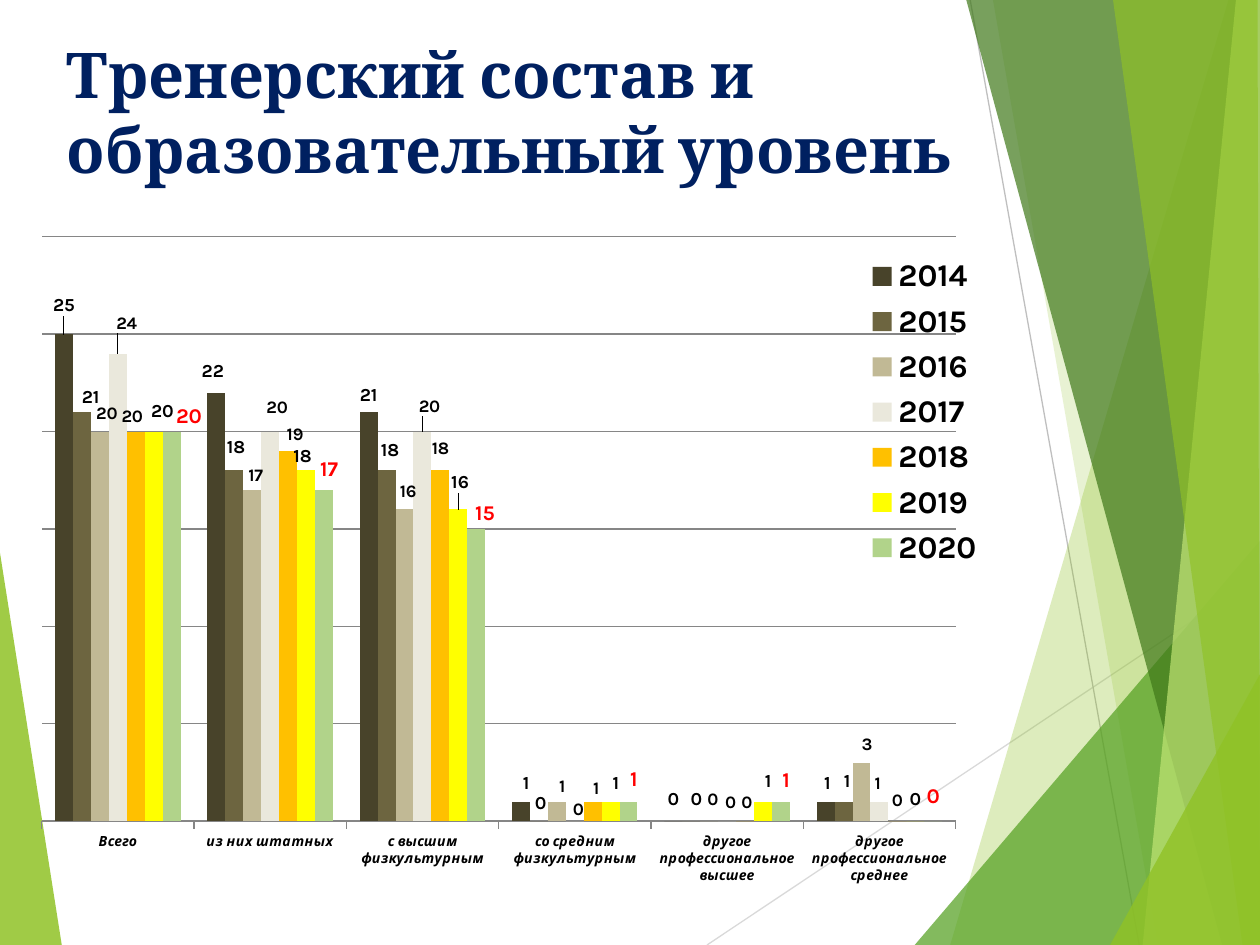
"""Builds a slide with a clustered column chart of coaching staff by education level."""
import pptx
import pptx.chart.data
import pptx.dml.color
import pptx.enum.chart
import pptx.enum.shapes
import pptx.enum.text
import pptx.oxml
import pptx.oxml.ns
import pptx.util

Pt = pptx.util.Pt
WIDTH, HEIGHT = 720, 540
TITLE = "Тренерский состав и образовательный уровень"
CATEGORIES = ["Всего", "из них штатных", "с высшим физкультурным", "со средним физкультурным",
              "другое профессиональное высшее", "другое профессиональное среднее"]
SERIES = [
    {"name": "2014", "values": [25, 22, 21, 1, 0, 1], "fill": "48432A", "size": 10.5, "color": "000000",
     "nudges": [(0, -7), (-2, -3), (0, 0), (3, -1), (0, -3), (1, -1)]},
    {"name": "2015", "values": [21, 18, 18, 0, 0, 1], "fill": "6D6540", "size": 10.5, "color": "000000",
     "nudges": [(5, 1), (1, -4), (2, -2), (1, -1), (3, -3), (2, -2)]},
    {"name": "2016", "values": [20, 17, 16, 1, 0, 3], "fill": "C1B995", "size": 10, "color": "000000",
     "nudges": [(4, -2), (2, 0), (2, -2), (3, 0), (2, -4), (3, -2)]},
    {"name": "2017", "values": [24, 20, 20, 0, 0, 1], "fill": "EAE8DC", "size": 10, "color": "000000",
     "nudges": [(5, -9), (4, -5), (4, -6), (2, 2), (2, -2), (-1, -2)]},
    {"name": "2018", "values": [20, 19, 18, 1, 0, 0], "fill": "FFC000", "size": 10, "color": "000000",
     "nudges": [(-2, 0), (4, -1), (0, -4), (2, 1), (1, -2), (0, -3)]},
    {"name": "2019", "values": [20, 18, 16, 1, 1, 0], "fill": "FFFF00", "size": 10.5, "color": "000000",
     "nudges": [(5, -2), (-2, 1), (1, -6), (3, -1), (3, -2), (0, -3)]},
    {"name": "2020", "values": [20, 17, 15, 1, 1, 0], "fill": "B1D38A", "size": 12, "color": "FF0000",
     "nudges": [(10, 1), (3, -2), (5, 1), (3, -3), (3, -2), (0, -4)]},
]
LEFT_FACET = ([(0, 316), (35.3, HEIGHT), (0, HEIGHT)], "90C226", 85)
RAYS = [((404, HEIGHT), (WIDTH, 329), "D9D9D9"), ((554.4, 0), (651, HEIGHT), "BFBFBF")]
RIGHT_FACETS = [
    ([(702, 0), (543, HEIGHT), (WIDTH, HEIGHT), (WIDTH, 0)], "90C226", 30),
    ([(567.4, 0), (661.7, HEIGHT), (WIDTH, HEIGHT), (WIDTH, 0)], "90C226", 20),
    ([(522.7, HEIGHT), (WIDTH, 309), (WIDTH, HEIGHT)], "54A021", 72),
    ([(552.2, 0), (698.4, HEIGHT), (WIDTH, HEIGHT), (WIDTH, 0)], "3F7819", 70),
    ([(706.3, 0), (653, HEIGHT), (WIDTH, HEIGHT), (WIDTH, 0)], "C0E474", 70),
    ([(636, 0), (710, HEIGHT), (WIDTH, HEIGHT), (718.6, 0)], "90C226", 65),
    ([(634.3, HEIGHT), (WIDTH, 385.2), (WIDTH, HEIGHT)], "90C226", 80),
]
CHART_BOX = (-8.6, 111.6, 689, 401)
PLOT_BOX = (32.4, 23.7, 522.3, 334)
LEGEND_BOX = (500, 31, 74, 186)


def rgb(value):
    return pptx.dml.color.RGBColor.from_string(value)


def set_font(font, size, color="000000", name="Karla", italic=False):
    font.size, font.name, font.bold, font.italic = Pt(size), name, True, italic
    font.color.rgb = rgb(color)


def write(frame, text, **style):
    frame.word_wrap = True
    frame.auto_size = pptx.enum.text.MSO_AUTO_SIZE.NONE
    frame.vertical_anchor = pptx.enum.text.MSO_ANCHOR.TOP
    paragraph = frame.paragraphs[0]
    paragraph.alignment = pptx.enum.text.PP_ALIGN.LEFT
    run = paragraph.add_run()
    run.text = text
    set_font(run.font, **style)


def add_facet(slide, corners, color, opacity):
    points = [(Pt(x), Pt(y)) for x, y in corners]
    builder = slide.shapes.build_freeform(*points[0])
    builder.add_line_segments(points[1:], close=True)
    facet = builder.convert_to_shape()
    facet.shadow.inherit = False
    facet.line.fill.background()
    facet.fill.solid()
    facet.fill.fore_color.rgb = rgb(color)
    tone = facet._element.spPr.find(".//" + pptx.oxml.ns.qn("a:srgbClr"))
    tone.append(pptx.oxml.parse_xml(
        f'<a:alpha {pptx.oxml.ns.nsdecls("a")} val="{opacity * 1000}"/>'))


def add_ray(slide, start, end, color):
    ray = slide.shapes.add_connector(pptx.enum.shapes.MSO_CONNECTOR.STRAIGHT,
                                     *(Pt(v) for v in start + end))
    ray.line.color.rgb = rgb(color)
    ray.line.width = Pt(0.75)
    ray._element.spPr.append(pptx.oxml.parse_xml(
        f'<a:effectLst {pptx.oxml.ns.nsdecls("a")}/>'))


def layout(box, modes=""):
    """Return a manual chart layout for a box, or for an offset, in points."""
    sizes = CHART_BOX[2:] * 2
    parts = "".join(f'<c:{tag} val="{value / size:.4f}"/>'
                    for tag, value, size in zip("xywh", box, sizes))
    return pptx.oxml.parse_xml(f'<c:layout {pptx.oxml.ns.nsdecls("c")}><c:manualLayout>'
                               f'{modes}{parts}</c:manualLayout></c:layout>')


def place(element, box, target=""):
    """Give a chart part a fixed box inside the chart."""
    for old in element.findall(pptx.oxml.ns.qn("c:layout")):
        element.remove(old)
    modes = target + '<c:xMode val="edge"/><c:yMode val="edge"/>'
    position = element.find(pptx.oxml.ns.qn("c:legendPos"))
    element.insert(0 if position is None else 1, layout(box, modes))


def format_series(series, content):
    series.format.fill.solid()
    series.format.fill.fore_color.rgb = rgb(content["fill"])
    series.invert_if_negative = False
    labels = series.data_labels
    labels.show_value = True
    set_font(labels.font, content["size"], content["color"])
    for index, nudge in enumerate(content["nudges"]):
        label = series.points[index].data_label
        set_font(label.font, content["size"], content["color"])
        label.position = pptx.enum.chart.XL_LABEL_POSITION.OUTSIDE_END
        labels._element.findall(pptx.oxml.ns.qn("c:dLbl"))[index].insert(1, layout(nudge))


def add_staff_chart(slide):
    data = pptx.chart.data.CategoryChartData()
    data.categories = CATEGORIES
    for content in SERIES:
        data.add_series(content["name"], content["values"])
    chart = slide.shapes.add_chart(pptx.enum.chart.XL_CHART_TYPE.COLUMN_CLUSTERED,
                                   *(Pt(v) for v in CHART_BOX), data).chart
    set_font(chart.font, 18)
    chart.has_title = False
    plot = chart.plots[0]
    plot.gap_width, plot.overlap, plot.vary_by_categories = 150, 0, False
    for series, content in zip(plot.series, SERIES):
        format_series(series, content)

    levels = chart.category_axis
    set_font(levels.tick_labels.font, 8, italic=True)
    levels.major_tick_mark = pptx.enum.chart.XL_TICK_MARK.OUTSIDE
    counts = chart.value_axis
    counts.minimum_scale, counts.maximum_scale, counts.major_unit = 0, 30, 5
    counts.visible = False
    counts.has_major_gridlines = True
    for line in (levels.format.line, counts.major_gridlines.format.line):
        line.color.rgb = rgb("868686")
        line.width = Pt(0.75)

    chart.has_legend = True
    chart.legend.position = pptx.enum.chart.XL_LEGEND_POSITION.RIGHT
    chart.legend.include_in_layout = False
    set_font(chart.legend.font, 18)
    place(chart.legend._element, LEGEND_BOX)
    place(chart._chartSpace.chart.plotArea, PLOT_BOX, '<c:layoutTarget val="inner"/>')


def main():
    deck = pptx.Presentation()
    deck.slide_width, deck.slide_height = Pt(WIDTH), Pt(HEIGHT)
    slide = deck.slides.add_slide(deck.slide_layouts[5])
    add_facet(slide, *LEFT_FACET)
    for ray in RAYS:
        add_ray(slide, *ray)
    for facet in RIGHT_FACETS:
        add_facet(slide, *facet)
    title = slide.shapes.title
    title.left, title.top, title.width, title.height = Pt(31), Pt(16.6), Pt(584), Pt(75)
    write(title.text_frame, TITLE, size=36, color="002060", name="Cambria")
    add_staff_chart(slide)
    deck.save("out.pptx")


if __name__ == "__main__":
    main()
